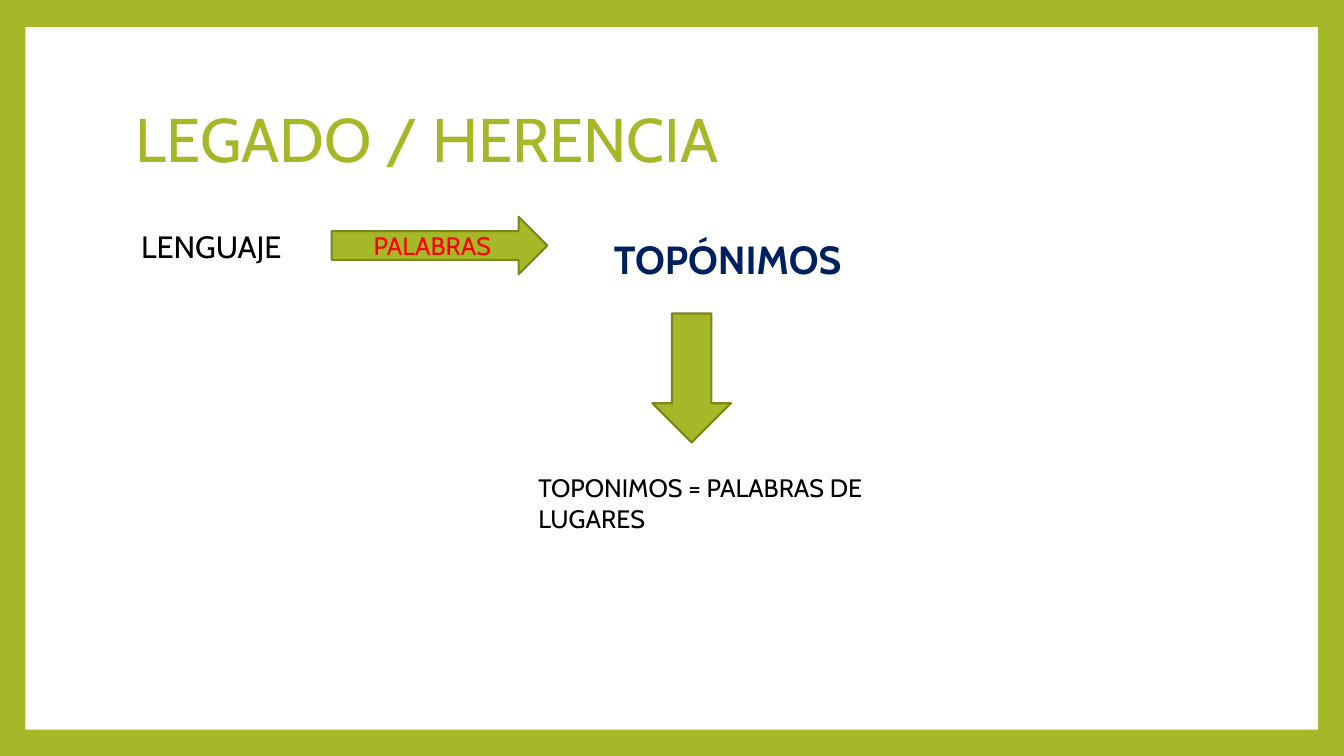
from dataclasses import dataclass
from typing import Optional

from pptx import Presentation
from pptx import util as u
from pptx.dml.color import RGBColor
from pptx.enum import shapes, text

WIDTH, HEIGHT = u.Inches(13.33), u.Inches(7.5)
FONT = "Cabin"
LIME, OLIVE, WHITE = "A6B727", "7B871D", "FFFFFF"
BLACK, NAVY, RED = "000000", "002060", "FF0000"
KIND = shapes.MSO_SHAPE
ALIGN, ANCHOR = text.PP_ALIGN, text.MSO_ANCHOR


@dataclass
class Box:
    """Left, top, width and height in percent of the slide."""
    left: float
    top: float
    width: float
    height: float

    def place(self) -> list[int]:
        sides = ((self.left, WIDTH), (self.top, HEIGHT),
                 (self.width, WIDTH), (self.height, HEIGHT))
        return [round(share / 100 * full) for share, full in sides]


@dataclass
class Label:
    words: str
    size: int
    color: str
    bold: bool = False
    align: ALIGN = ALIGN.LEFT
    anchor: ANCHOR = ANCHOR.TOP
    spacing: float = 1.0
    inset: float = 0.1


@dataclass
class Block:
    box: Box
    kind: Optional[KIND] = None
    fill: str = LIME
    line: Optional[str] = OLIVE
    label: Optional[Label] = None


BLOCKS = [
    Block(Box(1.88, 3.6, 96.17, 92.93), KIND.RECTANGLE, WHITE, None),
    Block(Box(9.38, 8.93, 81.02, 19.73), label=Label(
        "LEGADO / HERENCIA", 44, LIME, anchor=ANCHOR.MIDDLE, spacing=0.9)),
    Block(Box(9.38, 30, 58.74, 8.13), label=Label(
        "LENGUAJE", 22, BLACK, spacing=0.9, inset=0.15)),
    Block(Box(24.68, 28.67, 16.05, 7.6), KIND.RIGHT_ARROW, label=Label(
        "PALABRAS", 18, RED, align=ALIGN.CENTER, anchor=ANCHOR.MIDDLE)),
    Block(Box(44.94, 30.53, 18.98, 7.6), label=Label(
        "TOPÓNIMOS", 28, NAVY, bold=True)),
    Block(Box(39.31, 61.87, 33.91, 5.33), label=Label(
        "TOPONIMOS = PALABRAS DE LUGARES", 18, BLACK)),
    Block(Box(48.54, 41.47, 5.85, 17.07), KIND.DOWN_ARROW),
]


def tint(code: str) -> RGBColor:
    return RGBColor.from_string(code)


def format(target: object, values: dict) -> None:
    for name, value in values.items():
        setattr(target, name, value)


def write(shape, label: Label) -> None:
    frame = shape.text_frame
    format(frame, {"word_wrap": True, "vertical_anchor": label.anchor,
                   "margin_left": u.Inches(label.inset)})
    line = frame.paragraphs[0]
    format(line, {"alignment": label.align, "line_spacing": label.spacing})
    run = line.add_run()
    run.text = label.words
    format(run.font, {"name": FONT, "size": u.Pt(label.size),
                      "bold": label.bold})
    run.font.color.rgb = tint(label.color)


def draw(slide, block: Block) -> None:
    place = block.box.place()
    if block.kind is None:
        shape = slide.shapes.add_textbox(*place)
    else:
        shape = slide.shapes.add_shape(block.kind, *place)
        shape.shadow.inherit = False
        shape.fill.solid()
        shape.fill.fore_color.rgb = tint(block.fill)
        if block.line:
            shape.line.color.rgb = tint(block.line)
            shape.line.width = u.Pt(1.5)
        else:
            shape.line.fill.background()
    if block.label:
        write(shape, block.label)


def main() -> None:
    deck = Presentation()
    format(deck, {"slide_width": WIDTH, "slide_height": HEIGHT})
    slide = deck.slides.add_slide(deck.slide_layouts[6])
    back = slide.background.fill
    back.solid()
    back.fore_color.rgb = tint(LIME)
    for block in BLOCKS:
        draw(slide, block)
    deck.save("out.pptx")


if __name__ == "__main__":
    main()
